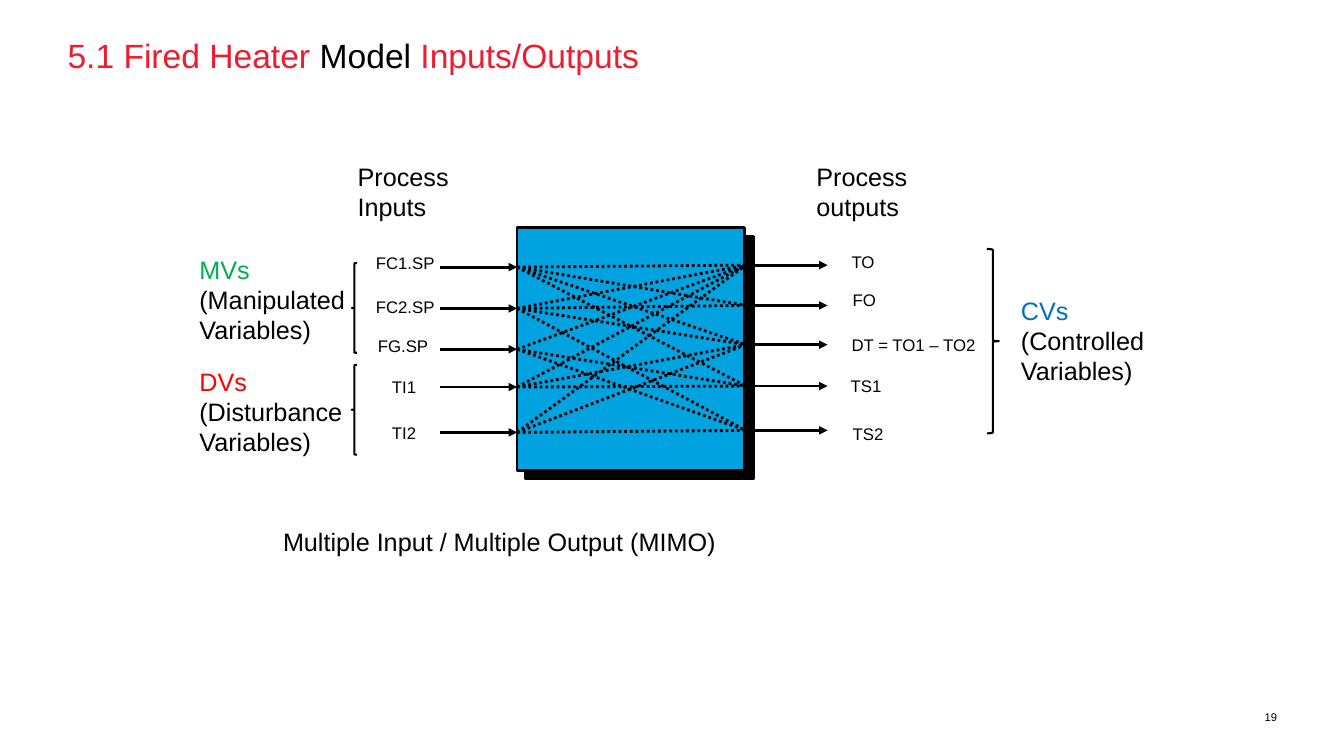
from lxml.etree import SubElement
from pptx import Presentation
from pptx.dml.color import RGBColor
from pptx.enum.dml import MSO_LINE_DASH_STYLE as Dash
from pptx.enum.shapes import MSO_CONNECTOR as Connector, MSO_SHAPE as Shape
from pptx.enum.text import MSO_AUTO_SIZE as AutoSize, PP_ALIGN as Align
from pptx.oxml.ns import qn
from pptx.util import Inches, Pt

# Every length is counted in grid cells of a tenth of an inch.
CELL = Inches(0.1)
BLACK, RED = "000000", "ED1C2E"
LEFT_SIDE = 1

presentation = Presentation()
presentation.slide_width = int(133.33 * CELL)
presentation.slide_height = 75 * CELL
slide = presentation.slides.add_slide(presentation.slide_layouts[6])


def add_text(place, size, paragraphs, inset=True, wrap=False, align=Align.LEFT):
    """Add a text box; each paragraph is a list of (text, colour) runs."""
    shape = slide.shapes.add_textbox(*[int(length * CELL) for length in place])
    frame = shape.text_frame
    frame.word_wrap = wrap
    frame.auto_size = AutoSize.SHAPE_TO_FIT_TEXT if inset else AutoSize.NONE
    if not inset:
        frame.margin_left = frame.margin_right = 0
        frame.margin_top = frame.margin_bottom = 0
    for index, runs in enumerate(paragraphs):
        paragraph = frame.add_paragraph() if index else frame.paragraphs[0]
        paragraph.alignment = align
        for text, color in runs:
            run = paragraph.add_run()
            run.text = text
            run.font.name = "Arial"
            run.font.size = Pt(size)
            run.font.color.rgb = RGBColor.from_string(color)


def add_line(x1, y1, x2, y2):
    """Add a black 2 pt connector without a shadow."""
    line = slide.shapes.add_connector(
        Connector.STRAIGHT, *[int(length * CELL) for length in (x1, y1, x2, y2)])
    line.line.width = Pt(2)
    line.line.color.rgb = RGBColor.from_string(BLACK)
    SubElement(line._element.spPr, qn("a:effectLst"))
    return line


# Title, caption and slide number
add_text((6.7, 3.5, 120, 8), 24,
         [[("5.1 Fired Heater ", RED), ("Model", BLACK), (" Inputs/Outputs", RED)]],
         inset=False, wrap=True)
add_text((27.1, 51.7, 75.4, 4), 18,
         [[("Multiple Input / Multiple Output (MIMO)", BLACK)]], wrap=True)
add_text((122.4, 70.5, 4.3, 1.9), 8, [[("19", BLACK)]],
         inset=False, wrap=True, align=Align.RIGHT)

# Process block with a hard drop shadow
process = slide.shapes.add_shape(
    Shape.RECTANGLE, *[int(length * CELL) for length in (51.3, 22.6, 22.6, 24.1)])
process.fill.solid()
process.fill.fore_color.rgb = RGBColor.from_string("00A3E0")
process.line.color.rgb = RGBColor.from_string(BLACK)
process.line.width = Pt(2)
process.shadow.inherit = False
shadow = SubElement(process._element.spPr.find(qn("a:effectLst")), qn("a:outerShdw"),
                    dist=str(Pt(8.5)), dir="2700000", algn="ctr", rotWithShape="0")
SubElement(shadow, qn("a:srgbClr"), val=BLACK)

# Inputs and outputs from top to bottom: arrow row, label box
MIDDLE = 34.65
inputs = [
    (26.5, "FC1.SP", 36.3, 24.6, 7.9),
    (30.6, "FC2.SP", 36.3, 28.9, 7.9),
    (MIDDLE, "FG.SP", 36.5, 32.8, 7.1),
    (38.4, "TI1", 37.9, 36.9, 4.4),
    (42.9, "TI2", 37.9, 41.4, 4.4),
]
outputs = [
    (26.3, "TO", 83.5, 24.5, 4.3),
    (30.3, "FO", 83.6, 28.3, 4.3),
    (34.2, "DT = TO1 – TO2", 83.5, 32.7, 14.5),
    (38.3, "TS1", 83.4, 36.8, 5.1),
    (42.7, "TS2", 83.6, 41.5, 5.1),
]
for start, end, signals in ((43.7, 51.3, inputs), (74.5, 82.1, outputs)):
    for row, label, left, top, width in signals:
        arrow = add_line(start, row, end, row)
        SubElement(arrow.line._get_or_add_ln(), qn("a:tailEnd"), type="triangle")
        if row == MIDDLE:
            arrow.end_connect(process, LEFT_SIDE)
        add_text((left, top, width, 3), 12, [[(label, BLACK)]])

# Outputs that each input acts on
influences = [(0, 1, 2, 3), (0, 1, 2, 4), (0, 3, 4), (0, 2, 3), (0, 2, 4)]
for (input_row, *_), targets in zip(inputs, influences):
    for target in targets:
        influence = add_line(51.3, input_row, 74, outputs[target][0])
        influence.line.dash_style = Dash.ROUND_DOT
        if input_row == MIDDLE:
            influence.begin_connect(process, LEFT_SIDE)

# Column headings
for left, heading in ((34.5, "Inputs"), (80, "outputs")):
    add_text((left, 15.5, 11.1, 7.1), 18, [[("Process", BLACK)], [(heading, BLACK)]])

# Variable groups with their braces
groups = [
    ("MVs", "00B050", "(Manipulated", (18.8, 24.7, 16.6, 10.1),
     Shape.LEFT_BRACE, (34.9, 26.1, 0.5, 8.9)),
    ("DVs", "FF0000", "(Disturbance", (18.8, 35.8, 16.3, 10.1),
     Shape.LEFT_BRACE, (34.9, 36.2, 0.5, 8.9)),
    ("CVs", "0070C0", "(Controlled", (100.3, 28.8, 14.4, 10.1),
     Shape.RIGHT_BRACE, (97.9, 24.7, 1.2, 18.3)),
]
for name, color, meaning, place, brace_kind, brace_place in groups:
    add_text(place, 18, [[(name, color)], [(meaning, BLACK)], [("Variables)", BLACK)]])
    brace = slide.shapes.add_shape(
        brace_kind, *[int(length * CELL) for length in brace_place])
    brace.fill.background()
    brace.line.color.rgb = RGBColor.from_string(BLACK)
    brace.line.width = Pt(1.5)
    brace.shadow.inherit = False

presentation.save("out.pptx")
